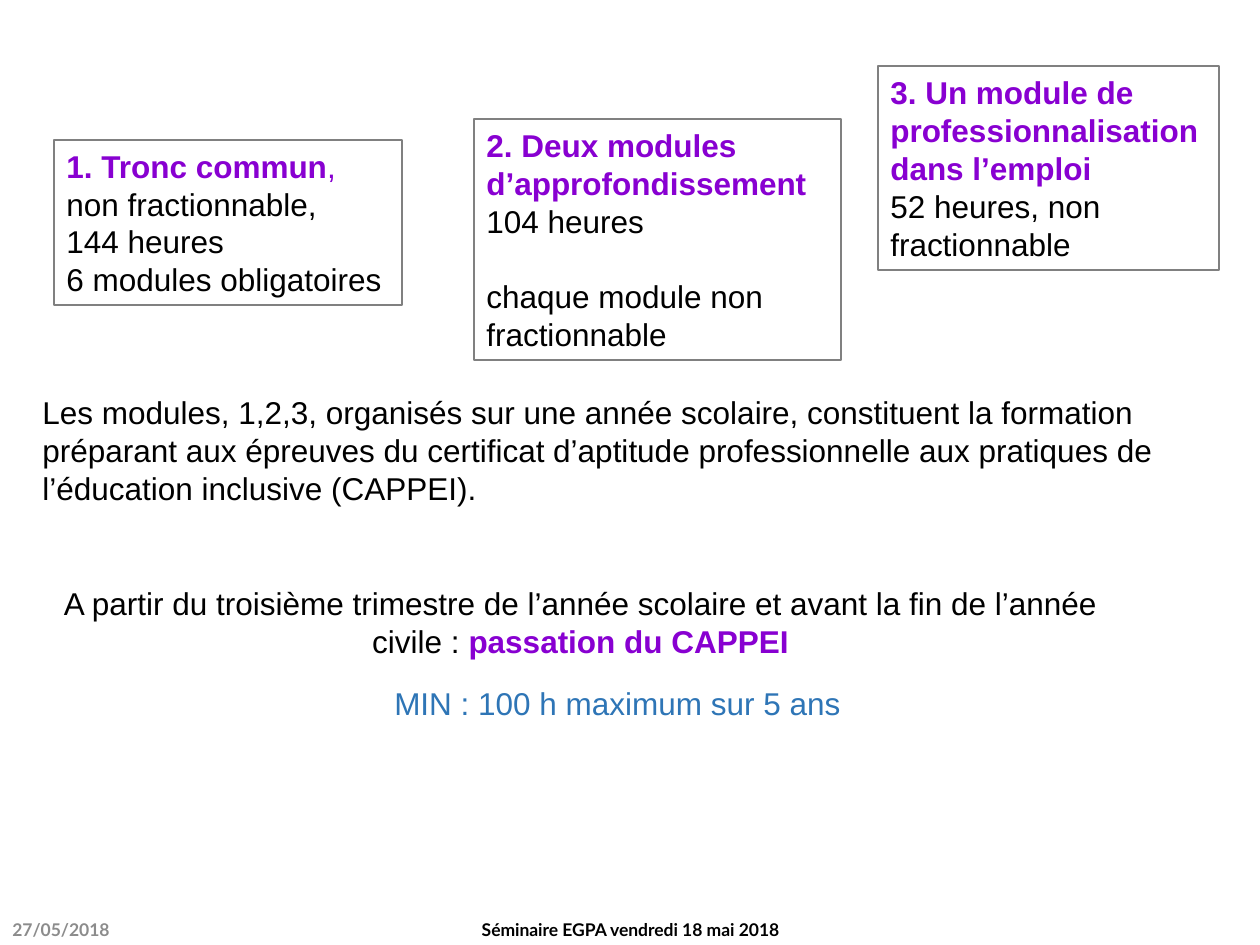
from pptx import Presentation
from pptx.dml.color import RGBColor
from pptx.enum.shapes import MSO_SHAPE
from pptx.enum.text import MSO_ANCHOR, MSO_AUTO_SIZE, PP_ALIGN
from pptx.util import Emu, Inches, Pt

SCALE = Inches(1) / 126
BLACK, PURPLE, BLUE, GREY = "000000", "8800D1", "2E75B6", "8C8C8C"
BODY = {"name": "Arial", "size": Pt(18)}
SMALL = {"name": "Lato", "size": Pt(10)}


def px(num):
    """Turn pixels into EMU."""
    return Emu(round(num * SCALE))


def color(code):
    """Turn a hex string into a colour."""
    return RGBColor.from_string(code)


def style(item, values):
    """Set attributes from a dict."""
    for key, value in values.items():
        setattr(item, key, value)


def write(shape, paras, face=BODY, align=PP_ALIGN.LEFT,
          anchor=MSO_ANCHOR.TOP, size=MSO_AUTO_SIZE.NONE):
    """Fill a shape with paragraphs, each a list of (text, colour, bold)."""
    frame = shape.text_frame
    style(frame, {"word_wrap": True, "auto_size": size,
                  "vertical_anchor": anchor})
    for index, parts in enumerate(paras):
        para = frame.add_paragraph() if index else frame.paragraphs[0]
        para.alignment = align
        for text, code, bold in parts:
            run = para.add_run()
            run.text = text
            style(run.font, {**face, "bold": bold})
            run.font.color.rgb = color(code)
    return frame


def card(slide, box, paras):
    """Draw one outlined module card."""
    shape = slide.shapes.add_shape(MSO_SHAPE.RECTANGLE, *map(px, box))
    shape.shadow.inherit = False
    shape.fill.background()
    shape.line.color.rgb = color("808080")
    shape.line.width = Pt(0.75)
    return write(shape, paras, anchor=MSO_ANCHOR.MIDDLE)


def label(slide, box, parts, **look):
    """Place one paragraph of free text."""
    return write(slide.shapes.add_textbox(*map(px, box)), [parts], **look)


def modules(slide, left, top):
    """Place the three module cards."""
    card(slide, (left, top + 74, 348, 165), [
        [("1. Tronc commun", PURPLE, True), (",", PURPLE, False)],
        [("non fractionnable,", BLACK, False)],
        [("144 heures", BLACK, False)],
        [("6 modules obligatoires", BLACK, False)]])
    frame = card(slide, (left + 420, top + 53, 367, 241), [
        [("2. Deux modules d’approfondissement", PURPLE, True)],
        [("104 heures", BLACK, False)],
        [("chaque module non fractionnable", BLACK, False)]])
    frame.paragraphs[2].space_before = Pt(21.6)
    card(slide, (left + 824, top, 341, 204), [
        [("3. Un module de professionnalisation dans l’emploi", PURPLE, True)],
        [("52 heures, non fractionnable", BLACK, False)]])


def notice(slide, left, top):
    """Place the explanations under the cards."""
    mid = {"align": PP_ALIGN.CENTER}
    label(slide, (left, top, 1176, 127), [(
        "Les modules, 1,2,3, organisés sur une année scolaire, constituent la "
        "formation préparant aux épreuves du certificat d’aptitude "
        "professionnelle aux pratiques de l’éducation inclusive (CAPPEI).",
        BLACK, False)])
    label(slide, (left, top + 191, 1101, 89), [
        ("A partir du troisième trimestre de l’année scolaire et avant la fin "
         "de l’année civile : ", BLACK, False),
        ("passation du CAPPEI", PURPLE, True)], **mid)
    label(slide, (left + 290, top + 291, 595, 50),
          [("MIN : 100 h maximum sur 5 ans", BLUE, False)], **mid)


def footer(slide, left, top):
    """Place the date and the event name."""
    look = {"face": SMALL, "anchor": MSO_ANCHOR.MIDDLE}
    label(slide, (left, top, 262, 31), [("27/05/2018", GREY, True)], **look)
    label(slide, (left + 431, top, 399, 31),
          [("Séminaire EGPA vendredi 18 mai 2018", BLACK, True)],
          align=PP_ALIGN.CENTER, **look)


def main():
    """Build and save the slide."""
    deck = Presentation()
    style(deck, {"slide_width": px(1260), "slide_height": px(945)})
    slide = deck.slides.add_slide(deck.slide_layouts[6])
    modules(slide, 54, 66)
    notice(slide, 30, 387)
    footer(slide, 0, 914)
    deck.save("out.pptx")


if __name__ == "__main__":
    main()
